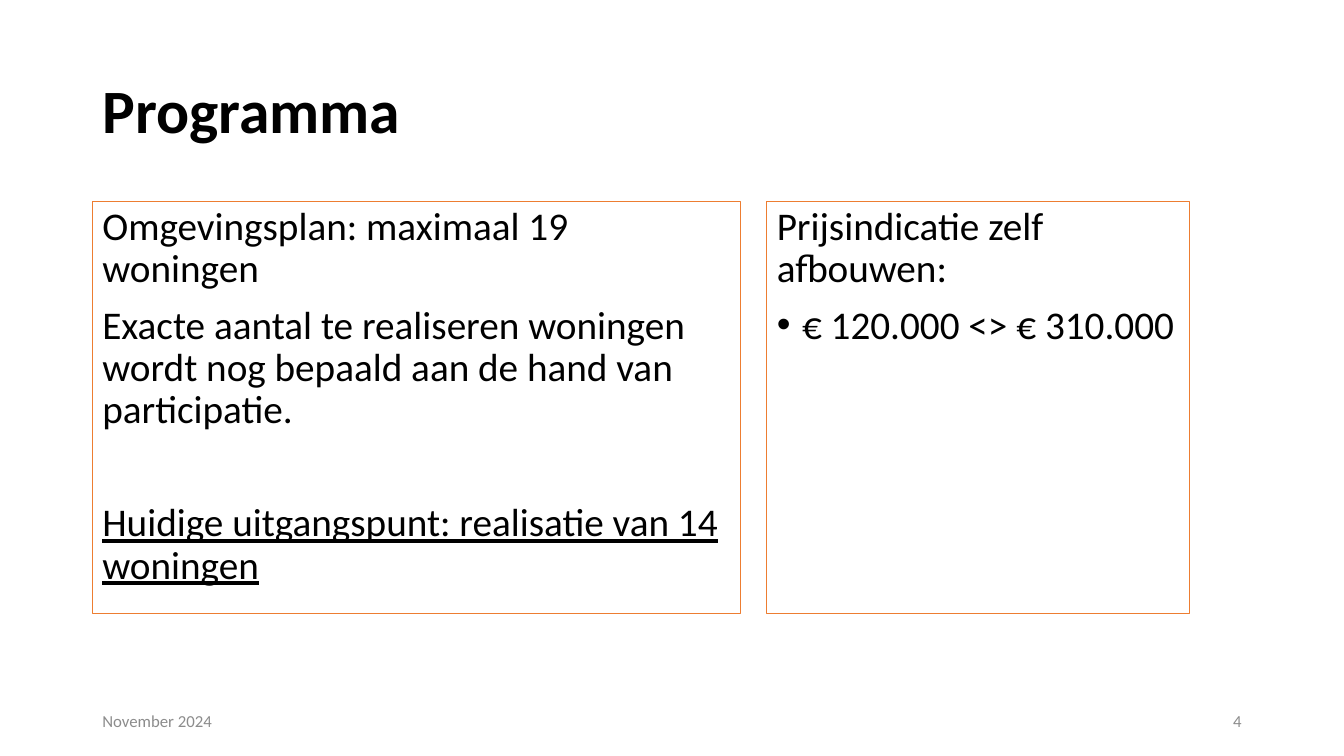
"""Build the "Programma" slide with two outlined text panels and a footer."""
from dataclasses import dataclass

from lxml import etree
from pptx import Presentation
from pptx.dml.color import RGBColor
from pptx.enum.text import MSO_ANCHOR, MSO_AUTO_SIZE, PP_ALIGN
from pptx.oxml.ns import qn
from pptx.util import Inches, Pt

TOP, MIDDLE = MSO_ANCHOR.TOP, MSO_ANCHOR.MIDDLE
LEFT, RIGHT = PP_ALIGN.LEFT, PP_ALIGN.RIGHT
NO_AUTOFIT = MSO_AUTO_SIZE.NONE
BLACK = RGBColor(0x00, 0x00, 0x00)
GRAY = RGBColor(0x8C, 0x8C, 0x8C)
ORANGE = RGBColor(0xED, 0x7D, 0x31)
FONT = "Calibri"
SLIDE_WIDTH, SLIDE_HEIGHT = Inches(13.33), Inches(7.5)
COLUMN, ROW = SLIDE_WIDTH / 160, SLIDE_HEIGHT / 150
BULLET_INDENT = Inches(0.25)


@dataclass(frozen=True)
class Area:
    column: float
    row: float
    columns: float
    rows: float


@dataclass(frozen=True)
class Line:
    text: str
    size: float = 28
    color: RGBColor = BLACK
    bold: bool = False
    underline: bool = False
    bullet: bool = False
    space_before: float = 0
    spacing: float = 0.9
    align: PP_ALIGN = LEFT


@dataclass(frozen=True)
class Block:
    area: Area
    lines: tuple[Line, ...]
    outlined: bool = False


TITLE = Block(Area(11, 8, 138, 29), (Line("Programma", size=44, bold=True),))
BLOCKS = (
    Block(Area(11, 40, 77.2, 81.8), (
        Line("Omgevingsplan: maximaal 19 woningen"),
        Line("Exacte aantal te realiseren woningen wordt nog bepaald "
             "aan de hand van participatie.", space_before=10),
        Line("Huidige uitgangspunt: realisatie van 14 woningen",
             underline=True, space_before=50.5),
    ), outlined=True),
    Block(Area(91.3, 40, 50.3, 81.8), (
        Line("Prijsindicatie zelf afbouwen:"),
        Line("€ 120.000 <> € 310.000", bullet=True, space_before=10),
    ), outlined=True),
    Block(Area(11, 139, 36, 8),
          (Line("November 2024", size=12, color=GRAY, spacing=1),)),
    Block(Area(113, 139, 36, 8),
          (Line("4", size=12, color=GRAY, spacing=1, align=RIGHT),)),
)


def bounds(area: Area) -> tuple[int, int, int, int]:
    """Convert grid units to left, top, width and height."""
    return (round(area.column * COLUMN), round(area.row * ROW),
            round(area.columns * COLUMN), round(area.rows * ROW))


def add_bullet(paragraph) -> None:
    """Give a paragraph a hanging bullet."""
    properties = paragraph._p.get_or_add_pPr()
    properties.set("marL", str(BULLET_INDENT))
    properties.set("indent", str(-BULLET_INDENT))
    etree.SubElement(properties, qn("a:buFont")).set("typeface", "Arial")
    etree.SubElement(properties, qn("a:buChar")).set("char", "•")


def write_lines(frame, lines: tuple[Line, ...], anchor: MSO_ANCHOR) -> None:
    """Fill a text frame with formatted paragraphs."""
    frame.text = "\n".join(line.text for line in lines)
    frame.word_wrap = True
    frame.auto_size = NO_AUTOFIT
    frame.vertical_anchor = anchor
    for paragraph, line in zip(frame.paragraphs, lines):
        if line.bullet:
            add_bullet(paragraph)
        paragraph.alignment = line.align
        paragraph.line_spacing = line.spacing
        paragraph.space_before = Pt(line.space_before)
        for run in paragraph.runs:
            run.font.name = FONT
            run.font.size = Pt(line.size)
            run.font.bold = line.bold
            run.font.underline = line.underline
            run.font.color.rgb = line.color


def draw_title(title, block: Block) -> None:
    """Place and format the title placeholder."""
    title.left, title.top, title.width, title.height = bounds(block.area)
    write_lines(title.text_frame, block.lines, MIDDLE)


def draw_block(slide, block: Block) -> None:
    """Draw a text box, with an outline where the block asks for one."""
    box = slide.shapes.add_textbox(*bounds(block.area))
    if block.outlined:
        box.line.color.rgb = ORANGE
        box.line.width = Pt(0.75)
    write_lines(box.text_frame, block.lines, TOP if block.outlined else MIDDLE)


def main() -> None:
    """Create and save the presentation."""
    presentation = Presentation()
    presentation.slide_width = SLIDE_WIDTH
    presentation.slide_height = SLIDE_HEIGHT
    slide = presentation.slides.add_slide(presentation.slide_layouts[5])
    draw_title(slide.shapes.title, TITLE)
    for block in BLOCKS:
        draw_block(slide, block)
    presentation.save("out.pptx")


if __name__ == "__main__":
    main()
